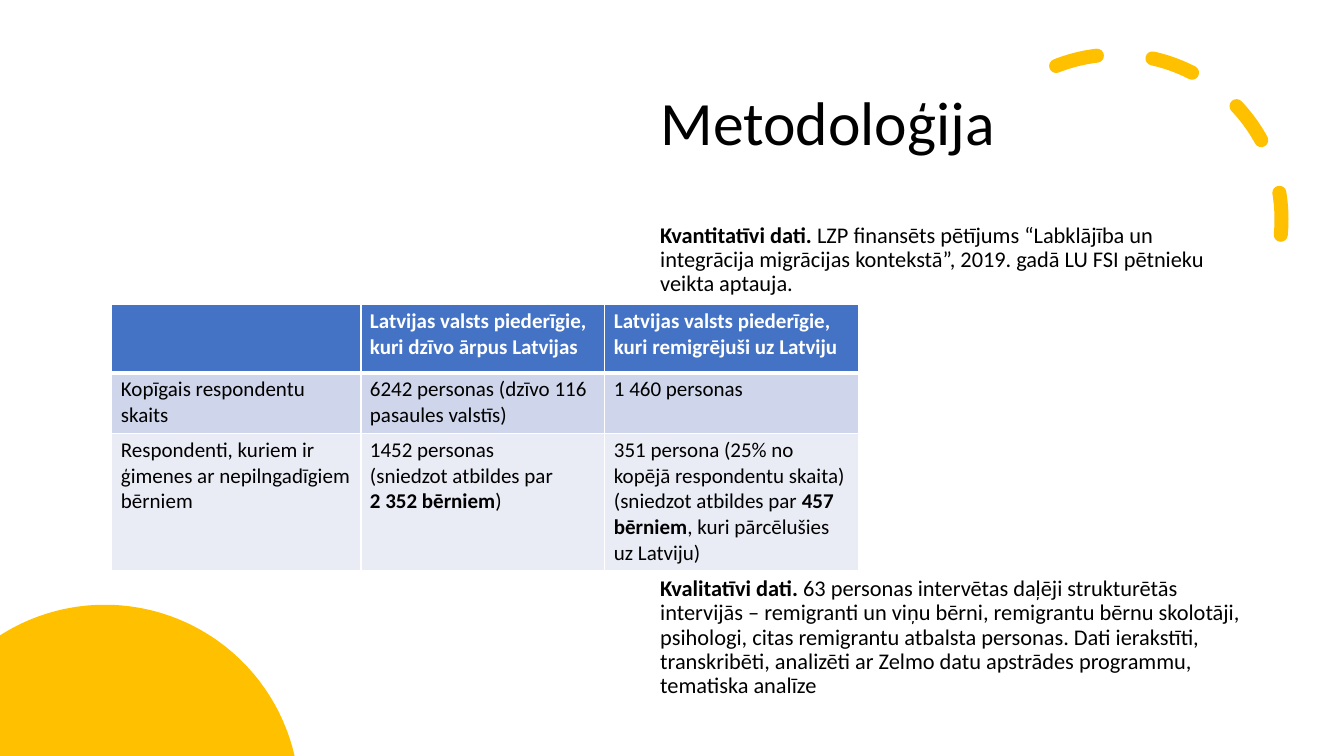
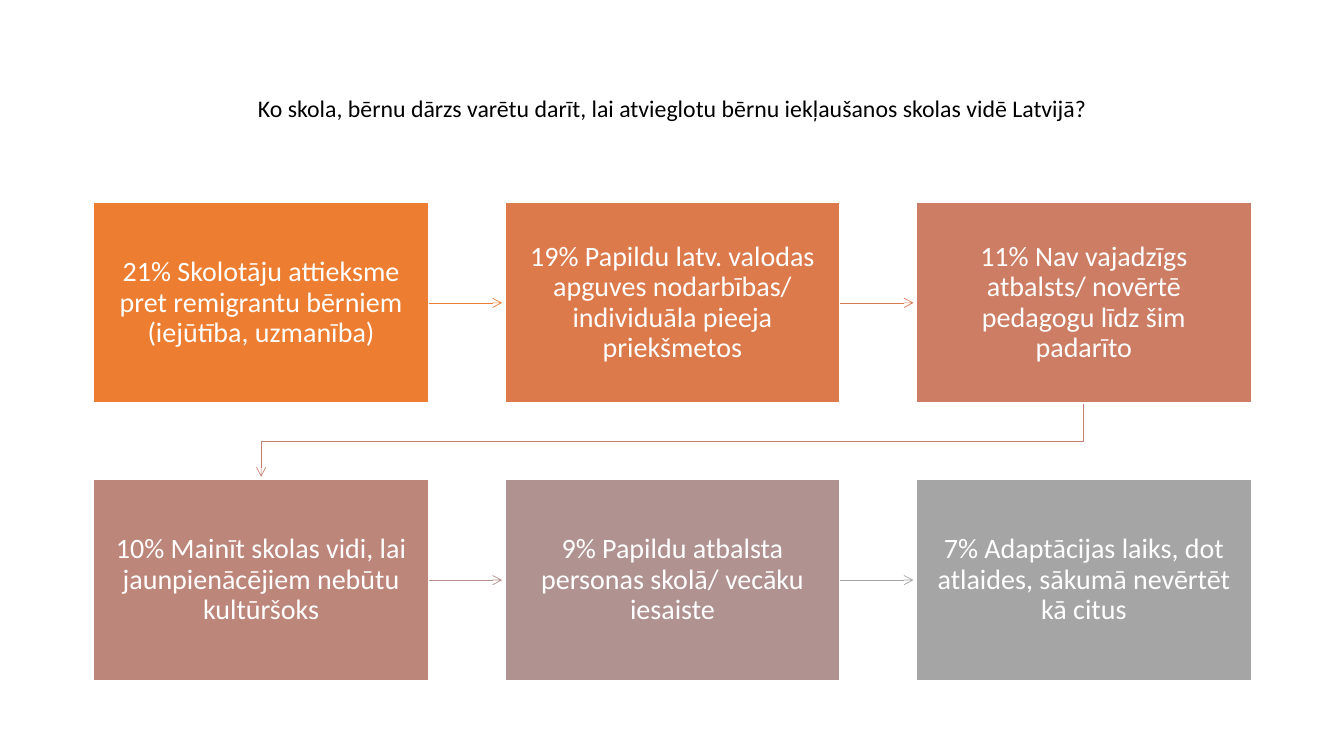
import math
from lxml import etree
from pptx import Presentation
from pptx.dml.color import RGBColor
from pptx.enum.dml import MSO_LINE
from pptx.enum.shapes import MSO_CONNECTOR, MSO_SHAPE
from pptx.enum.text import MSO_ANCHOR, MSO_AUTO_SIZE, PP_ALIGN
from pptx.oxml.ns import qn
from pptx.util import Inches, Pt

WIDE, HIGH = 13.33, 7.5
FONT = "Calibri"
LEFT, MID = PP_ALIGN.LEFT, PP_ALIGN.CENTER
TOP, CENTRE = MSO_ANCHOR.TOP, MSO_ANCHOR.MIDDLE
RECT, ARC = MSO_SHAPE.RECTANGLE, MSO_SHAPE.ARC
STRAIGHT, DASH, FIXED = MSO_CONNECTOR.STRAIGHT, MSO_LINE.DASH, MSO_AUTO_SIZE.NONE

BLACK = RGBColor(0, 0, 0)
WHITE = RGBColor(0xFF, 0xFF, 0xFF)
GOLD = RGBColor(0xFF, 0xC0, 0x00)
BLUE = RGBColor(0x44, 0x72, 0xC4)
PALE = RGBColor(0xCF, 0xD5, 0xEA)
LIGHT = RGBColor(0xE9, 0xEB, 0xF5)
STEPS = [RGBColor.from_string(c) for c in
         ("ED7D31", "DC7A4B", "CC7D64", "BD867B", "B09391", "A5A5A5")]
LINKS = [RGBColor.from_string(c) for c in
         ("ED7D31", "D87A51", "C48170", "B4908B", "A5A5A5")]

INTRO = ("*Kvantitatīvi dati.* LZP finansēts pētījums “Labklājība un integrācija "
         "migrācijas kontekstā”, 2019. gadā LU FSI pētnieku veikta aptauja.")
CLOSE = ("*Kvalitatīvi dati.* 63 personas intervētas daļēji strukturētās intervijās – "
         "remigranti un viņu bērni, remigrantu bērnu skolotāji, psihologi, citas "
         "remigrantu atbalsta personas. Dati ierakstīti, transkribēti, analizēti ar "
         "Zelmo datu apstrādes programmu, tematiska analīze")
ROWS = [
    ["", "*Latvijas valsts piederīgie, kuri dzīvo ārpus Latvijas*",
     "*Latvijas valsts piederīgie, kuri remigrējuši uz Latviju*"],
    ["Kopīgais respondentu skaits", "6242 personas (dzīvo 116 pasaules valstīs)",
     "1 460 personas"],
    ["Respondenti, kuriem ir ģimenes ar nepilngadīgiem bērniem",
     "1452 personas\n(sniedzot atbildes par\n*2 352 bērniem*)",
     "351 persona (25% no kopējā respondentu skaita) (sniedzot atbildes par "
     "*457 bērniem*, kuri pārcēlušies uz Latviju)"],
]
ANSWERS = [
    "21% Skolotāju attieksme pret remigrantu bērniem (iejūtība, uzmanība)",
    "19% Papildu latv. valodas apguves nodarbības/ individuāla pieeja priekšmetos",
    "11% Nav vajadzīgs atbalsts/ novērtē pedagogu līdz šim padarīto",
    "10% Mainīt skolas vidi, lai jaunpienācējiem nebūtu kultūršoks",
    "9% Papildu atbalsta personas skolā/ vecāku iesaiste",
    "7% Adaptācijas laiks, dot atlaides, sākumā nevērtēt kā citus",
]


def inch(*nums):
    return [Inches(n) for n in nums]


def write(frame, text, size=16, color=BLACK, align=LEFT, anchor=TOP,
          pad=(0.1, 0.05, 0.1, 0.05), gap=0.9):
    """Fill a text frame; newlines split paragraphs, stars enclose bold text."""
    frame.word_wrap = True
    frame.auto_size = FIXED
    frame.vertical_anchor = anchor
    (frame.margin_left, frame.margin_top,
     frame.margin_right, frame.margin_bottom) = inch(*pad)
    for i, line in enumerate(text.split("\n")):
        para = frame.add_paragraph() if i else frame.paragraphs[0]
        para.alignment, para.line_spacing = align, gap
        for j, part in enumerate(line.split("*")):
            if part:
                run = para.add_run()
                run.text = part
                font = run.font
                font.name, font.size, font.bold = FONT, Pt(size), j % 2 == 1
                font.color.rgb = color


def stroke(shape, color, width, arrow=False):
    """Style an outline, with an optional arrowhead, and drop the shadow."""
    shape.line.color.rgb = color
    shape.line.width = Pt(width)
    if arrow:
        etree.SubElement(shape.line._get_or_add_ln(), qn("a:tailEnd"), type="arrow")
    props = shape._element.spPr
    if props.find(qn("a:effectLst")) is None:
        etree.SubElement(props, qn("a:effectLst"))


def trace(slide, points, close):
    spots = [inch(*p) for p in points]
    build = slide.shapes.build_freeform(*spots[0], scale=1.0)
    build.add_line_segments(spots[1:], close=close)
    shape = build.convert_to_shape()
    shape.shadow.inherit = False
    return shape


def start(deck, text, box, **form):
    """Add a slide and set its title."""
    slide = deck.slides.add_slide(deck.slide_layouts[5])
    title = slide.shapes.title
    title.left, title.top, title.width, title.height = inch(*box)
    write(title.text_frame, text, anchor=CENTRE, **form)
    return slide


def note(slide, text, box):
    write(slide.shapes.add_textbox(*inch(*box)).text_frame, text)


def ring(slide, box):
    """Dashed arc in the upper corner."""
    arc = slide.shapes.add_shape(ARC, *inch(*box))
    arc.adjustments[0], arc.adjustments[1] = 144.42, 0
    arc.rotation = 66.1
    arc._element.spPr.find(qn("a:xfrm")).set("flipH", "1")
    arc.fill.background()
    arc.shadow.inherit = False
    stroke(arc, GOLD, 10)
    arc.line.dash_style = DASH
    arc.line._get_or_add_ln().set("cap", "rnd")


def disc(slide, x, top, rad):
    """Part of a disc, cut by the left and bottom edges of the slide."""
    y = top + rad
    first = math.pi + math.acos(x / rad)
    last = 2 * math.pi - math.asin((y - HIGH) / rad)
    turns = [first + (last - first) * i / 90 for i in range(91)]
    rim = [(max(0, x + rad * math.cos(t)), y + rad * math.sin(t)) for t in turns]
    shape = trace(slide, [(0, HIGH)] + rim, True)
    shape.fill.solid()
    shape.fill.fore_color.rgb = GOLD
    shape.line.fill.background()


def edge(cell, widths):
    props = cell._tc.get_or_add_tcPr()
    for side, width in zip("LRTB", widths):
        line = etree.SubElement(props, qn("a:ln" + side), w=str(Pt(width)))
        fill = etree.SubElement(line, qn("a:solidFill"))
        etree.SubElement(fill, qn("a:srgbClr"), val=str(WHITE))


def grid(slide, left, top, cols, highs):
    """Table of respondents."""
    box = inch(left, top, sum(cols), sum(highs))
    table = slide.shapes.add_table(len(highs), len(cols), *box).table
    table.horz_banding = False
    for col, width in zip(table.columns, cols):
        col.width = Inches(width)
    for r, (row, high, fill) in enumerate(zip(table.rows, highs, (BLUE, PALE, LIGHT))):
        row.height = Inches(high)
        for cell, text in zip(row.cells, ROWS[r]):
            edge(cell, (1, 1, 3 if r == 1 else 1, 1 if r else 3))
            cell.fill.solid()
            cell.fill.fore_color.rgb = fill
            cell.margin_left = cell.margin_right = Inches(0.09)
            cell.margin_top = cell.margin_bottom = Inches(0.04)
            write(cell.text_frame, text, size=15, color=BLACK if r else WHITE, gap=1.0)


def flow(slide, left, top, wide, high):
    """Two rows of three boxes, joined by arrows in reading order."""
    cell_w, cell_h = 3.32, 1.99
    step_x, step_y = (wide - cell_w) / 2, high - cell_h
    spots = [(left + i % 3 * step_x, top + i // 3 * step_y) for i in range(6)]
    for (x, y), color, text in zip(spots, STEPS, ANSWERS):
        box = slide.shapes.add_shape(RECT, *inch(x, y, cell_w, cell_h))
        box.shadow.inherit = False
        box.fill.solid()
        box.fill.fore_color.rgb = color
        stroke(box, WHITE, 1)
        write(box.text_frame, text, size=20, color=WHITE, align=MID,
              anchor=CENTRE, pad=(0.16, 0.17, 0.16, 0.17))
    # Arrows
    for i, color in enumerate(LINKS):
        x, y = spots[i]
        if i % 3 == 2:
            mid, low = x + cell_w / 2, y + cell_h
            end, turn = spots[i + 1][0] + cell_w / 2, (low + y + step_y) / 2
            link = trace(slide, [(mid, low + 0.01), (mid, turn), (end, turn),
                                 (end, y + step_y - 0.03)], False)
            link.fill.background()
        else:
            y += cell_h / 2
            link = slide.shapes.add_connector(
                STRAIGHT, *inch(x + cell_w, y, x + step_x - 0.03, y))
        stroke(link, color, 0.5, arrow=True)


def main():
    deck = Presentation()
    deck.slide_width, deck.slide_height = inch(WIDE, HIGH)

    # Methods
    slide = start(deck, "Metodoloģija", (6.45, 0.52, 5.97, 1.45), size=44)
    ring(slide, (9.44, 0.54, 3.27, 3.27))
    disc(slide, 1.04, 6, 1.93)
    note(slide, INTRO, (6.45, 2.17, 5.97, 0.85))
    note(slide, CLOSE, (6.45, 5.68, 5.97, 1.3))
    grid(slide, 1.11, 3.02, (2.47, 2.42, 2.52), (0.68, 0.6, 1.36))

    # Survey answers
    slide = start(deck, "Ko skola, bērnu dārzs varētu darīt, lai atvieglotu bērnu "
                  "iekļaušanos skolas vidē Latvijā?", (0.92, 0.61, 11.5, 1.24),
                  size=17, align=MID, pad=(0.1, 0.05, 0.1, 0.33))
    flow(slide, 0.93, 2.01, 11.48, 4.74)

    deck.save("out.pptx")


if __name__ == "__main__":
    main()
